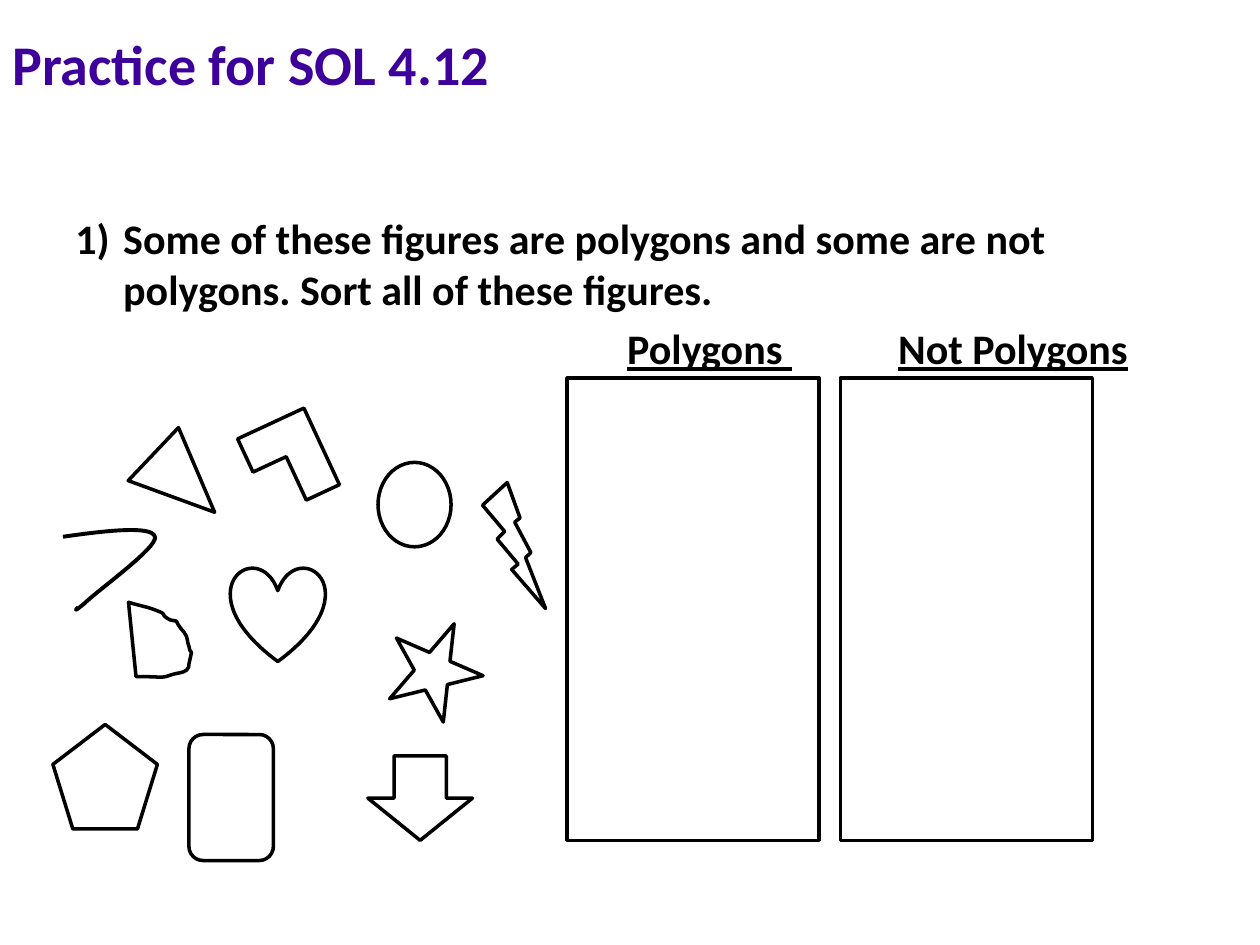
import lxml.etree
import pptx
import pptx.util
import pptx.dml.color
import pptx.enum.shapes
import pptx.enum.text
import pptx.oxml.ns

Inches = pptx.util.Inches
Pt = pptx.util.Pt
qn = pptx.oxml.ns.qn
KIND = pptx.enum.shapes.MSO_SHAPE

BLACK = "000000"
PURPLE = "3E009A"

FIGURES = [
    (KIND.ISOSCELES_TRIANGLE, 0.75, 0.17, 0.58, 0.67, 133.5),
    (KIND.OVAL, 2.58, 0.34, 0.58, 0.67, 0),
    (KIND.STAR_5_POINT, 2.66, 1.59, 0.75, 0.75, 23.5),
    (KIND.ROUNDED_RECTANGLE, 1.08, 2.5, 0.67, 1, 0),
    (KIND.DOWN_ARROW, 2.5, 2.67, 0.83, 0.67, 0),
    (KIND.HEART, 1.41, 1.17, 0.75, 0.75, 0),
    (KIND.CORNER, 1.58, 0, 0.58, 0.67, 155.1),
    (KIND.LIGHTNING_BOLT, 3.41, 0.5, 0.5, 1, 0),
    (KIND.REGULAR_PENTAGON, 0, 2.42, 0.83, 0.83, 0),
]
HALF_ROUND = [
    (0, 0),
    (0.06, 0.02), (0.12, 0.03), (0.18, 0.05),
    (0.35, 0.11), (0.22, 0.08), (0.33, 0.14),
    (0.35, 0.14), (0.36, 0.15), (0.38, 0.15),
    (0.39, 0.17), (0.4, 0.19), (0.41, 0.2),
    (0.43, 0.23), (0.45, 0.24), (0.46, 0.27),
    (0.47, 0.3), (0.47, 0.33), (0.48, 0.35),
    (0.48, 0.37), (0.49, 0.39), (0.5, 0.4),
    (0.49, 0.43), (0.49, 0.46), (0.48, 0.49),
    (0.48, 0.5), (0.48, 0.53), (0.46, 0.54),
    (0.43, 0.56), (0.4, 0.56), (0.36, 0.57),
    (0.23, 0.61), (0.33, 0.59), (0.06, 0.59),
]
OPEN_CURVE = [
    (0, 0.09),
    (0.35, 0.04), (0.71, 0), (0.73, 0.09),
    (0.76, 0.17), (0.27, 0.52), (0.17, 0.62),
    (0.06, 0.71), (0.12, 0.65), (0.12, 0.65),
]


def color(value):
    """Return the colour of a hex string."""
    return pptx.dml.color.RGBColor.from_string(value)


def outline(shape, weight=2):
    """Give a shape a plain black outline without fill or shadow."""
    shape.shadow.inherit = False
    shape.fill.background()
    shape.line.color.rgb = color(BLACK)
    shape.line.width = Pt(weight)


def add_shape(page, kind, left, top, width, height, rotation=0):
    """Add an outlined preset shape."""
    shape = page.shapes.add_shape(
        kind, Inches(left), Inches(top), Inches(width), Inches(height))
    shape.rotation = rotation
    outline(shape)


def add_text(page, left, top, width, height, lines, size, tint=BLACK):
    """Add a bold text box with one paragraph per line and return it."""
    box = page.shapes.add_textbox(
        Inches(left), Inches(top), Inches(width), Inches(height))
    box.text_frame.word_wrap = True
    box.text_frame.text = lines
    for para in box.text_frame.paragraphs:
        for span in para.runs:
            format_span(span, size, tint)
    return box


def format_span(span, size, tint=BLACK):
    """Set the font of a run."""
    span.font.name = "Calibri"
    span.font.size = Pt(size)
    span.font.bold = True
    span.font.color.rgb = color(tint)


def add_curve(page, left, top, points, close, weight):
    """Add an outlined freeform of cubic curves."""
    places = [(Inches(left + x), Inches(top + y)) for x, y in points]
    builder = page.shapes.build_freeform(*places[0])
    builder.add_line_segments(places[1:], close=close)
    shape = builder.convert_to_shape()
    lines = list(shape._element.iter(qn("a:lnTo")))
    for first in range(0, len(lines), 3):
        curve = lxml.etree.Element(qn("a:cubicBezTo"))
        lines[first].addprevious(curve)
        for line in lines[first:first + 3]:
            curve.append(line[0])
            line.getparent().remove(line)
    outline(shape, weight)


def add_title(page, left, top, width, height):
    """Add the slide title."""
    box = add_text(page, left, top, width, height,
                   "Practice for SOL 4.12", 32, PURPLE)
    box.text_frame.vertical_anchor = pptx.enum.text.MSO_ANCHOR.MIDDLE


def add_question(page, left, top, width, height):
    """Add the numbered question and the headings of the two bins."""
    box = add_text(page, left, top, width, height,
                   "1)\tSome of these figures are polygons and some are not "
                   "polygons. Sort all of these figures.", 24)
    box.text_frame.margin_top = Inches(0.52)
    properties = box.text_frame.paragraphs[0]._p.get_or_add_pPr()
    properties.set("marL", str(Inches(0.38)))
    properties.set("indent", str(-Inches(0.38)))
    para = box.text_frame.add_paragraph()
    para.space_before = Pt(5)
    stops = lxml.etree.SubElement(para._p.get_or_add_pPr(), qn("a:tabLst"))
    for heading, place in (("Polygons ", 4.38), ("Not Polygons", 6.53)):
        stop = lxml.etree.SubElement(stops, qn("a:tab"))
        stop.set("pos", str(Inches(place)))
        stop.set("algn", "l")
        for text in ("\t", heading):
            span = para.add_run()
            span.text = text
            format_span(span, 24)
            span.font.underline = text == heading


def add_figures(page, left, top):
    """Add the figures to be sorted."""
    for kind, x, y, width, height, rotation in FIGURES:
        add_shape(page, kind, left + x, top + y, width, height, rotation)
    add_curve(page, left + 0.6, top + 1.45, HALF_ROUND, True, 2)
    add_curve(page, left + 0.08, top + 0.84, OPEN_CURVE, False, 2.25)


def add_bins(page, left, top, width, height, pitch):
    """Add the two empty sorting bins."""
    for column in range(2):
        add_shape(page, KIND.RECTANGLE, left + column * pitch, top,
                  width, height)


def main():
    """Build the slide and save it."""
    deck = pptx.Presentation()
    deck.slide_width = Inches(10)
    deck.slide_height = Inches(7.5)
    page = deck.slides.add_slide(deck.slide_layouts[6])
    add_title(page, 0, 0.04, 9.67, 0.92)
    add_question(page, 0.5, 1.17, 9, 5.53)
    add_bins(page, 4.5, 3, 2, 3.67, 2.17)
    add_figures(page, 0.42, 3.33)
    deck.save("out.pptx")


if __name__ == "__main__":
    main()
